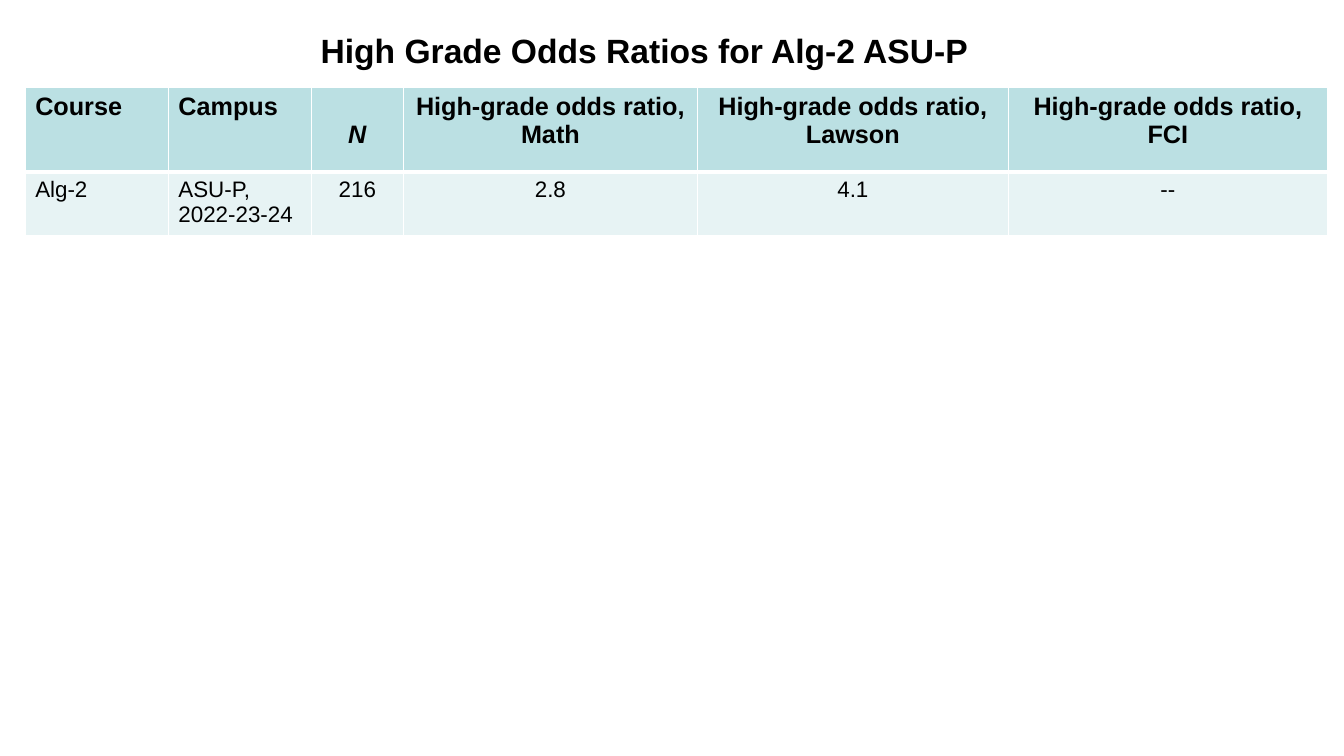
"""Build a slide with a table of high-grade odds ratios."""
from lxml import etree
from pptx import Presentation
from pptx.dml.color import RGBColor
from pptx.enum import text
from pptx.oxml import ns
from pptx.util import Inches, Pt

TITLE = "High Grade Odds Ratios for Alg-2 ASU-P"
ROWS = [
    ["Course", "Campus", "N", "High-grade odds ratio, Math",
     "High-grade odds ratio, Lawson", "High-grade odds ratio, FCI"],
    ["Alg-2", "ASU-P, 2022-23-24", "216", "2.8", "4.1", "--"],
]
COL_WIDTHS = [1.42, 1.42, 0.91, 2.92, 3.08, 3.17]
ROW_HEIGHTS = [0.84, 0.63]
COLORS = {"text": "000000", "header": "BBE0E3", "body": "E7F3F4", "border": "FFFFFF"}
FONT = "Arial"
LEFT, CENTER = text.PP_ALIGN.LEFT, text.PP_ALIGN.CENTER


def write(tf, content, size=16, bold=False, italic=False, align=LEFT):
    """Put formatted text in the first paragraph of a text frame."""
    p = tf.paragraphs[0]
    p.alignment = align
    r = p.add_run()
    r.text = content
    r.font.name, r.font.size = FONT, Pt(size)
    r.font.bold, r.font.italic = bold, italic
    r.font.color.rgb = RGBColor.from_string(COLORS["text"])


def set_borders(cell, **widths):
    """Give each side of a cell a solid line of the given width in points."""
    tc_pr = cell._tc.get_or_add_tcPr()
    for i, (side, width) in enumerate(widths.items()):
        ln = etree.Element(ns.qn(f"a:ln{side}"), w=str(Pt(width)))
        fill = etree.SubElement(ln, ns.qn("a:solidFill"))
        etree.SubElement(fill, ns.qn("a:srgbClr"), val=COLORS["border"])
        tc_pr.insert(i, ln)


def add_title(s):
    """Format and place the title."""
    sp = s.shapes.title
    sp.left, sp.top, sp.width, sp.height = map(Inches, (3.08, 0.25, 8.42, 0.5))
    tf = sp.text_frame
    tf.word_wrap = True
    tf.auto_size = text.MSO_AUTO_SIZE.NONE
    tf.vertical_anchor = text.MSO_ANCHOR.TOP
    write(tf, TITLE, size=24, bold=True)


def add_odds_table(s):
    """Add the table with its fills and borders."""
    table = s.shapes.add_table(
        len(ROWS), len(COL_WIDTHS), Inches(0.25), Inches(0.87),
        Inches(sum(COL_WIDTHS)), Inches(sum(ROW_HEIGHTS))).table
    for col, width in zip(table.columns, COL_WIDTHS):
        col.width = Inches(width)
    for i, (values, height) in enumerate(zip(ROWS, ROW_HEIGHTS)):
        table.rows[i].height = Inches(height)
        header = i == 0
        for j, value in enumerate(values):
            cell = table.cell(i, j)
            symbol = value == "N"
            cell.fill.solid()
            cell.fill.fore_color.rgb = RGBColor.from_string(
                COLORS["header" if header else "body"])
            cell.margin_top = Inches(0.33 if symbol else 0.05)
            write(cell.text_frame, value, size=18 if header else 16, bold=header,
                  italic=symbol, align=LEFT if j < 2 else CENTER)
            set_borders(cell, L=1, R=1, T=1 if header else 3, B=3 if header else 1)


def main():
    prs = Presentation()
    prs.slide_width, prs.slide_height = Inches(13.33), Inches(7.5)
    s = prs.slides.add_slide(prs.slide_layouts[5])
    add_odds_table(s)
    add_title(s)
    prs.save("out.pptx")


if __name__ == "__main__":
    main()
